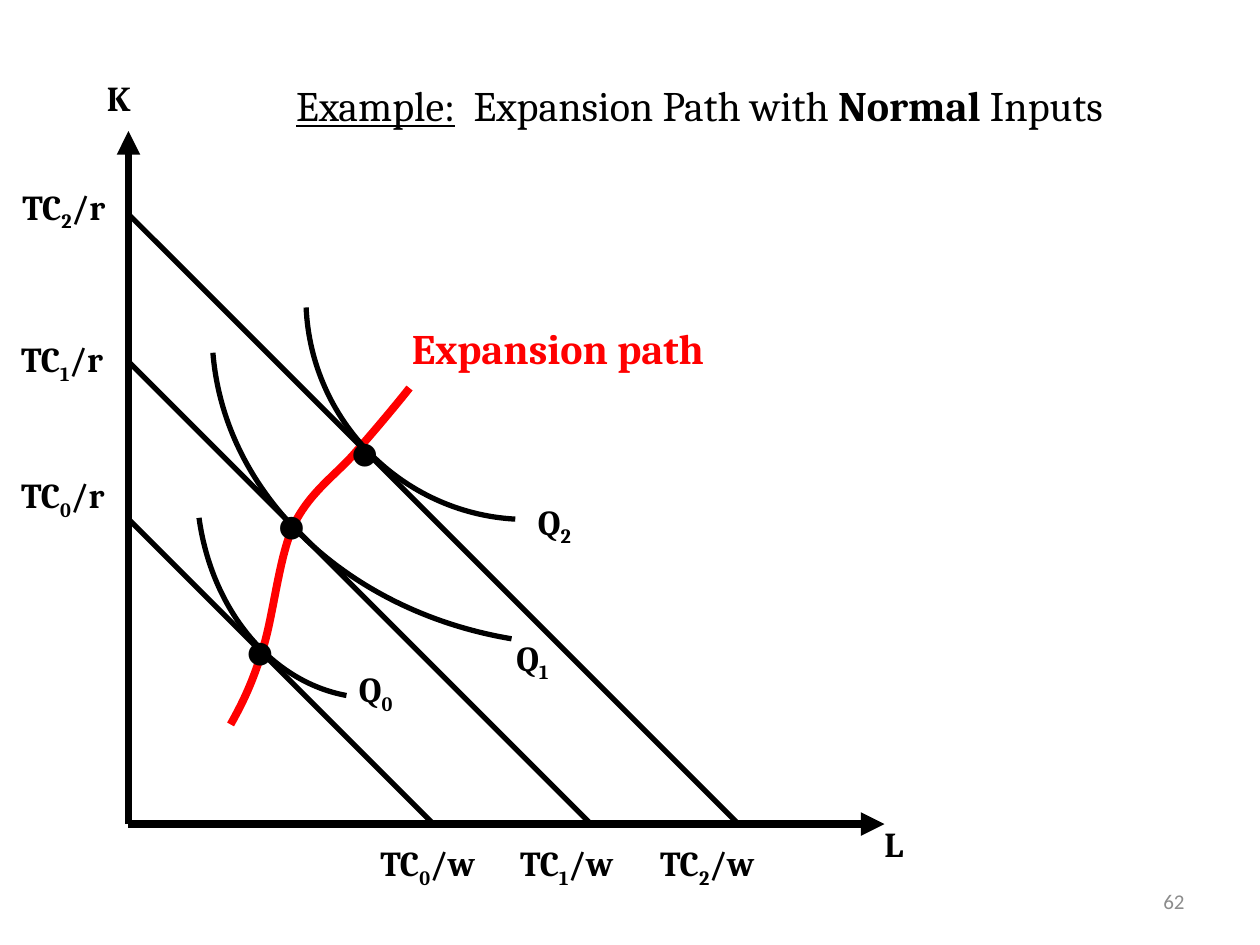
from itertools import groupby

from lxml import etree
from pptx import Presentation
from pptx.dml.color import RGBColor
from pptx.enum.shapes import MSO_CONNECTOR
from pptx.enum.text import MSO_ANCHOR, MSO_AUTO_SIZE, PP_ALIGN
from pptx.oxml.ns import qn
from pptx.util import Inches, Pt

STRAIGHT = MSO_CONNECTOR.STRAIGHT
TOP, MIDDLE = MSO_ANCHOR.TOP, MSO_ANCHOR.MIDDLE
FIXED, GROW = MSO_AUTO_SIZE.NONE, MSO_AUTO_SIZE.SHAPE_TO_FIT_TEXT
LEFT, RIGHT = PP_ALIGN.LEFT, PP_ALIGN.RIGHT

BLACK, RED, GRAY = "000000", "FF0000", "8C8C8C"
SERIF = "Cambria"
LEFT_X, BASE_Y = 1.02, 6.54
COST_STEP = 1.11

COSTS = [
    {"top": 4.12, "label": (0.07, 3.71), "dot": (1.85, 4.7), "name": (2.75, 5.25),
     "curve": [(2.75, 5.52), (2.15, 5.41), (1.68, 4.84), (1.58, 4.11)]},
    {"top": 2.87, "label": (0.07, 2.63), "dot": (2.1, 3.7), "name": (4, 5),
     "curve": [(4.06, 5.07), (2.75, 4.85), (1.78, 3.92), (1.69, 2.8)]},
    {"top": 1.7, "label": (0.08, 1.42), "dot": (2.68, 3.12), "name": (4.17, 3.92),
     "curve": [(4.09, 4.12), (3.19, 4.07), (2.47, 3.34), (2.43, 2.44)]},
]
PATH = [(1.83, 5.75), (1.92, 5.59), (2, 5.43), (2.08, 5.17), (2.17, 4.9),
        (2.21, 4.43), (2.33, 4.17), (2.46, 3.9), (2.68, 3.76), (2.83, 3.58),
        (2.99, 3.4), (3.18, 3.17), (3.25, 3.08)]


def color(code):
    """Turn a hex string into a colour."""
    return RGBColor.from_string(code)


def style(run, size, code=BLACK, bold=False, face=SERIF):
    """Set the font of one run."""
    font = run.font
    font.size, font.bold, font.name = Pt(size), bold, face
    font.color.rgb = color(code)


def add_title(slide):
    """Fill and place the title."""
    title = slide.shapes.title
    title.left, title.top = Inches(2.25), Inches(0.58)
    title.width, title.height = Inches(7.17), Inches(0.5)
    frame = title.text_frame
    frame.auto_size, frame.vertical_anchor = FIXED, TOP
    line = frame.paragraphs[0]
    line.alignment = LEFT
    for part in ("Example:", "  Expansion Path with ", "Normal", " Inputs"):
        run = line.add_run()
        run.text = part
        style(run, 24, bold=part == "Normal")
        run.font.underline = part == "Example:"


def add_label(slide, text, spot, width, height=0.43, size=20, code=BLACK, face=SERIF):
    """Add a bold label whose digits are subscripts."""
    box = slide.shapes.add_textbox(*map(Inches, (*spot, width, height)))
    frame = box.text_frame
    frame.word_wrap, frame.auto_size = False, GROW
    for digit, chars in groupby(text, str.isdigit):
        run = frame.paragraphs[0].add_run()
        run.text = "".join(chars)
        style(run, size, code, True, face)
        if digit:
            run.font._element.set("baseline", "-25000")


def add_number(slide, text):
    """Add the page number."""
    box = slide.shapes.add_textbox(*map(Inches, (7.17, 6.95, 2.33, 0.4)))
    frame = box.text_frame
    frame.word_wrap, frame.vertical_anchor = True, MIDDLE
    frame.text = text
    line = frame.paragraphs[0]
    line.alignment = RIGHT
    style(line.runs[0], 12, GRAY, face="Calibri")


def add_line(slide, start, end, width, arrow=False):
    """Draw a straight line or an arrow."""
    line = slide.shapes.add_connector(STRAIGHT, *map(Inches, (*start, *end)))
    line.line.width = Pt(width)
    line.line.color.rgb = color(BLACK)
    if arrow:
        etree.SubElement(line.line._get_or_add_ln(), qn("a:tailEnd"), type="triangle")
    etree.SubElement(line._element.spPr, qn("a:effectLst"))


def add_curve(slide, points, code, width):
    """Draw a chain of cubic curves through control points."""
    first, *rest = [(Inches(x), Inches(y)) for x, y in points]
    form = slide.shapes.build_freeform(*first)
    form.add_line_segments(rest, close=False)
    curve = form.convert_to_shape()
    curve.shadow.inherit = False
    curve.fill.background()
    curve.line.color.rgb = color(code)
    curve.line.width = Pt(width)
    steps = list(curve._element.iter(qn("a:lnTo")))
    for i in range(0, len(steps), 3):
        bend = etree.SubElement(steps[i].getparent(), qn("a:cubicBezTo"))
        for step in steps[i:i + 3]:
            bend.append(step[0])
            step.getparent().remove(step)


def add_cost(slide, i, cost):
    """Draw one cost line with its curve, point and labels."""
    top = cost["top"]
    add_line(slide, (LEFT_X, top), (LEFT_X + BASE_Y - top, BASE_Y), 3)
    add_curve(slide, cost["curve"], BLACK, 3)
    add_label(slide, "•", cost["dot"], 0.43, 0.9, 48, face="Times New Roman")
    add_label(slide, f"TC{i}/r", cost["label"], 0.87)
    add_label(slide, f"TC{i}/w", (2.92 + COST_STEP * i, 6.63), 0.95)
    add_label(slide, f"Q{i}", cost["name"], 0.52)


def main():
    """Build the slide and save it."""
    deck = Presentation()
    deck.slide_width, deck.slide_height = Inches(10), Inches(7.5)
    slide = deck.slides.add_slide(deck.slide_layouts[5])
    add_title(slide)
    add_number(slide, "62")
    add_curve(slide, PATH, RED, 4.5)
    for end in ((7.02, BASE_Y), (LEFT_X, 1.04)):
        add_line(slide, (LEFT_X, BASE_Y), end, 4.5, arrow=True)
    add_label(slide, "L", (6.92, 6.48), 0.37)
    add_label(slide, "K", (0.75, 0.56), 0.42)
    for i, cost in enumerate(COSTS):
        add_cost(slide, i, cost)
    add_label(slide, "Expansion path", (3.17, 2.51), 2.56, 0.5, 24, RED)
    deck.save("out.pptx")


if __name__ == "__main__":
    main()
